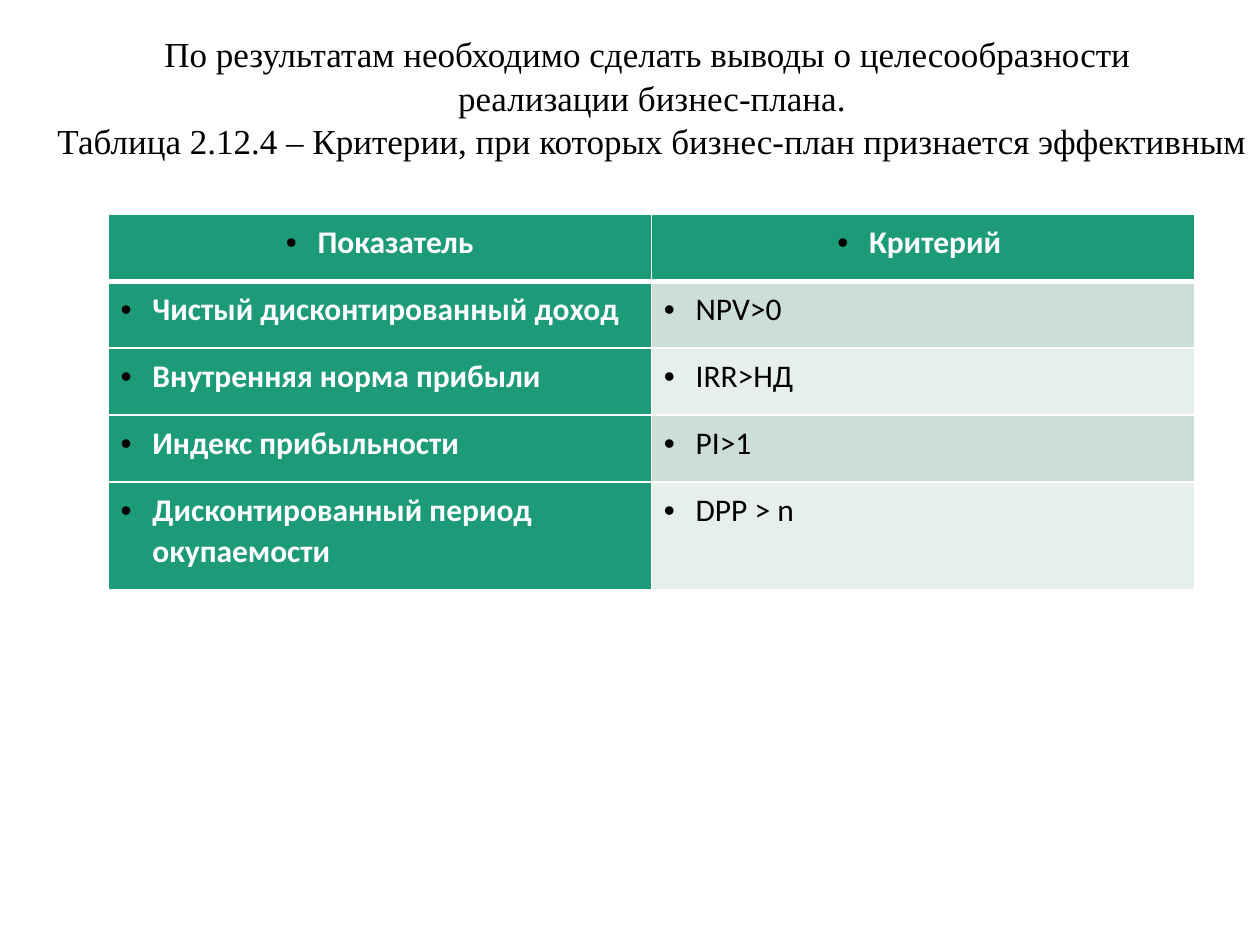
from dataclasses import dataclass

from pptx import Presentation as Deck
from pptx.dml.color import RGBColor as Rgb
from pptx.enum.text import MSO_ANCHOR as Anchor, PP_ALIGN as Align
from pptx.oxml.ns import qn
from pptx.util import Cm, Pt
from lxml.etree import SubElement as Sub


@dataclass(frozen=True)
class Theme:
    green: str = "1D9A78"
    bands: tuple = ("CCDED6", "E7EFEC")
    white: str = "FFFFFF"
    black: str = "000000"
    serif: str = "Times New Roman"
    sans: str = "Calibri"
    title: int = 20
    body: int = 18


THEME = Theme()

TITLE = [
    "По результатам необходимо сделать выводы о целесообразности ",
    "реализации бизнес-плана.",
    "Таблица 2.12.4 – Критерии, при которых бизнес-план признается эффективным",
]
ROWS = [
    ("Показатель", "Критерий "),
    ("Чистый дисконтированный доход", "NPV>0"),
    ("Внутренняя норма прибыли", "IRR>НД"),
    ("Индекс прибыльности", "PI>1"),
    ("Дисконтированный период окупаемости", "DPP > n"),
]


def write(par, text, *, font, size, color, bold=False,
          align=Align.LEFT, spacing=1.0, after=0):
    """Fill one paragraph with formatted text."""
    par.alignment = align
    par.line_spacing = spacing
    par.space_before, par.space_after = Pt(0), Pt(after)
    run = par.add_run()
    run.text = text
    run.font.name, run.font.size, run.font.bold = font, Pt(size), bold
    run.font.color.rgb = Rgb.from_string(color)


def add_dot(par, color):
    """Give a paragraph a round bullet with a hanging indent."""
    props = par._p.get_or_add_pPr()
    indent = Cm(0.64)
    props.set("marL", str(indent))
    props.set("indent", str(-indent))
    Sub(Sub(props, qn("a:buClr")), qn("a:srgbClr"), val=color)
    Sub(props, qn("a:buFont"), typeface="Arial")
    Sub(props, qn("a:buChar"), char="•")


def add_edges(cell, color, **widths):
    """Draw the cell borders; they must come before the fill."""
    props = cell._tc.get_or_add_tcPr()
    for side in "LRTB":
        line = Sub(props, qn(f"a:ln{side}"), w=str(Pt(widths.get(side, 1))))
        Sub(Sub(line, qn("a:solidFill")), qn("a:srgbClr"), val=color)


def add_title(slide):
    box = slide.shapes.add_textbox(Cm(0.79), Cm(0.53), Cm(24.71), Cm(2.82))
    frame = box.text_frame
    frame.word_wrap = True
    frame.vertical_anchor = Anchor.MIDDLE
    for i, text in enumerate(TITLE):
        par = frame.add_paragraph() if i else frame.paragraphs[0]
        write(par, text, font=THEME.serif, size=THEME.title,
              color=THEME.black, align=Align.CENTER, spacing=1.04)


def add_grid(slide):
    high = [Cm(1.35)] * 4 + [Cm(2.16)]
    table = slide.shapes.add_table(len(ROWS), 2, Cm(2.18), Cm(4.32),
                                   Cm(21.9), sum(high)).table
    for row, size in zip(table.rows, high):
        row.height = size
    for r, texts in enumerate(ROWS):
        for c, text in enumerate(texts):
            cell = table.cell(r, c)
            head = r == 0
            strong = head or c == 0
            # Thick rule under the header row
            add_edges(cell, THEME.white, T=3 if r == 1 else 1,
                      B=3 if head else 1)
            cell.fill.solid()
            shade = THEME.green if strong else THEME.bands[(r - 1) % 2]
            cell.fill.fore_color.rgb = Rgb.from_string(shade)
            par = cell.text_frame.paragraphs[0]
            write(par, text, font=THEME.sans, size=THEME.body, bold=strong,
                  color=THEME.white if strong else THEME.black,
                  align=Align.CENTER if head else Align.LEFT,
                  spacing=1.07, after=8)
            add_dot(par, THEME.black)


def main():
    deck = Deck()
    deck.slide_width, deck.slide_height = Cm(25.4), Cm(19.05)
    slide = deck.slides.add_slide(deck.slide_layouts[6])
    add_grid(slide)
    add_title(slide)
    deck.save("out.pptx")


if __name__ == "__main__":
    main()
